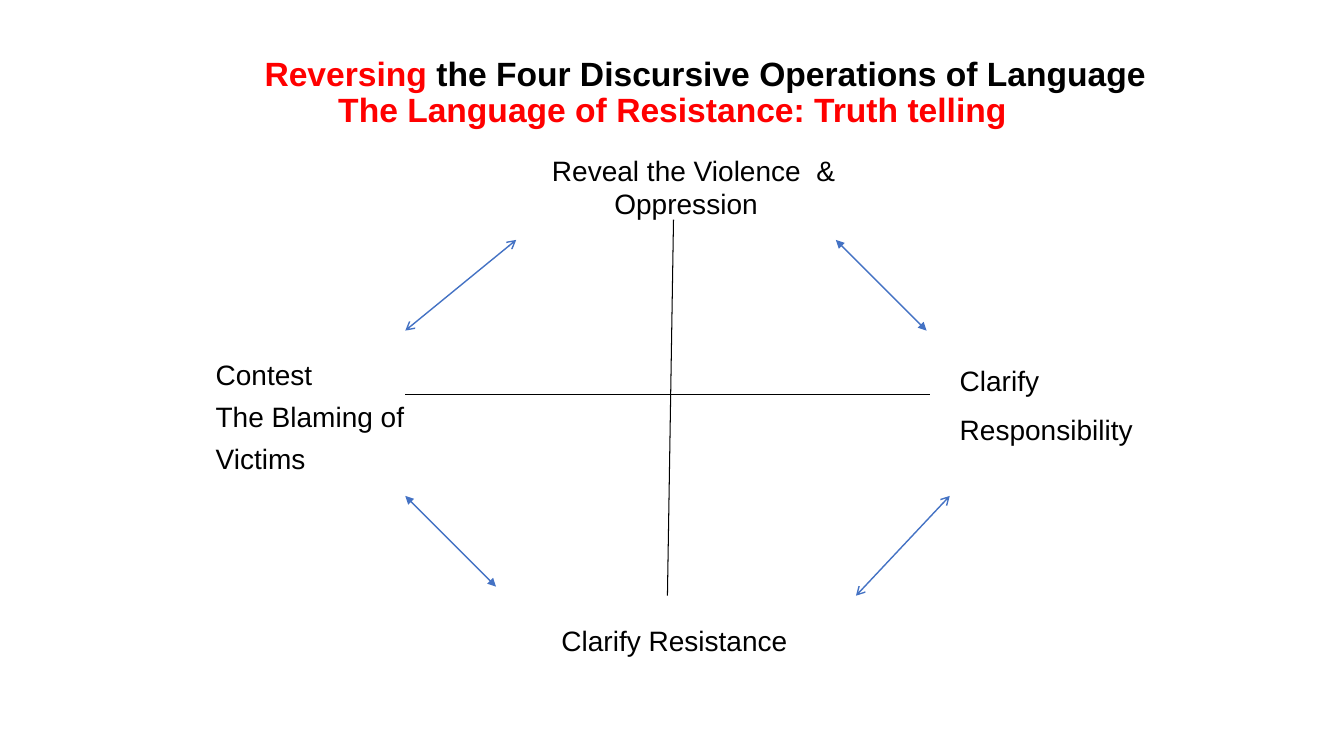
import lxml.etree
import pptx
import pptx.dml.color
import pptx.enum.shapes
import pptx.enum.text
import pptx.oxml.ns
import pptx.util

Inches = pptx.util.Inches
Pt = pptx.util.Pt
ALIGN = pptx.enum.text.PP_ALIGN
ANCHOR = pptx.enum.text.MSO_ANCHOR
FIT = pptx.enum.text.MSO_AUTO_SIZE

COLOURS = {"black": "000000", "red": "FF0000", "blue": "4472C4"}

# from, to, colour, width in points, arrowhead at both ends
LINES = [
    ((6.68, 2.18), (6.62, 5.91), "black", 0.75, None),
    ((9.22, 3.91), (4.02, 3.91), "black", 0.75, None),
    ((4.02, 3.28), (5.12, 2.38), "blue", 1, "arrow"),
    ((8.29, 2.38), (9.19, 3.28), "blue", 1, "triangle"),
    ((4.02, 4.92), (4.92, 5.82), "blue", 1, "triangle"),
    ((9.42, 4.92), (8.49, 5.91), "blue", 1, "arrow"),
]

# place, paragraphs, paragraph format, first-line indent in inches
LABELS = [
    ((5.33, 6.14, 3.17, 0.44), ["Clarify Resistance"], {}, 0.14),
    ((2.04, 3.56, 2.35, 1.26), ["Contest", "The Blaming of", "Victims"],
     {"line_spacing": 0.8, "space_before": Pt(11)}, 0),
    ((5.12, 1.47, 3.37, 0.77), ["Reveal the Violence  & Oppression"],
     {"alignment": ALIGN.CENTER, "space_before": Pt(11)}, 0.15),
    ((9.42, 3.56, 2.25, 0.94), ["Clarify", "Responsibility"],
     {"space_before": Pt(11)}, 0),
]

TITLE_PLACE = (0.67, 0.3, 12, 1.25)
TITLE_INDENT = 0.65
TITLE_LINES = [
    [("Reversing", "red"),
     (" the Four Discursive Operations of Language", "black")],
    [("The Language of Resistance: Truth telling", "red")],
]


def set_format(target, values):
    for name, value in values.items():
        setattr(target, name, value)


def rgb(colour):
    return pptx.dml.color.RGBColor.from_string(COLOURS[colour])


def add_line(slide, start, end, colour, width, arrowhead):
    line = slide.shapes.add_connector(
        pptx.enum.shapes.MSO_CONNECTOR.STRAIGHT, *map(Inches, start + end))
    line.line.color.rgb = rgb(colour)
    line.line.width = Pt(width)
    if arrowhead:
        outline = line.line._get_or_add_ln()
        for tag in ("a:headEnd", "a:tailEnd"):
            lxml.etree.SubElement(outline, pptx.oxml.ns.qn(tag), type=arrowhead)
    lxml.etree.SubElement(line._element.spPr, pptx.oxml.ns.qn("a:effectLst"))


def add_frame(slide, place, values):
    box = slide.shapes.add_textbox(*map(Inches, place))
    set_format(box.text_frame, {"word_wrap": True, **values})
    return box.text_frame


def format_para(para, values, indent):
    set_format(para, values)
    if indent:
        para._p.get_or_add_pPr().set("indent", str(Inches(indent)))


def add_span(para, text, colour, size, bold=False):
    span = para.add_run()
    span.text = text
    set_format(span.font, {"name": "Arial", "size": Pt(size), "bold": bold})
    span.font.color.rgb = rgb(colour)


def add_label(slide, place, texts, values, indent):
    frame = add_frame(slide, place, {"auto_size": FIT.SHAPE_TO_FIT_TEXT})
    for index, text in enumerate(texts):
        para = frame.add_paragraph() if index else frame.paragraphs[0]
        format_para(para, values, indent)
        add_span(para, text, "black", 20)


def add_title(slide):
    frame = add_frame(slide, TITLE_PLACE, {"vertical_anchor": ANCHOR.MIDDLE})
    para = frame.paragraphs[0]
    format_para(para, {"alignment": ALIGN.CENTER, "line_spacing": 0.9},
                TITLE_INDENT)
    for index, spans in enumerate(TITLE_LINES):
        if index:
            para.add_line_break()
        for text, colour in spans:
            add_span(para, text, colour, 24, bold=True)


def main():
    deck = pptx.Presentation()
    set_format(deck, {"slide_width": Inches(13.33), "slide_height": Inches(7.5)})
    slide = deck.slides.add_slide(deck.slide_layouts[6])
    for line in LINES:
        add_line(slide, *line)
    for label in LABELS:
        add_label(slide, *label)
    add_title(slide)
    deck.save("out.pptx")


if __name__ == "__main__":
    main()
